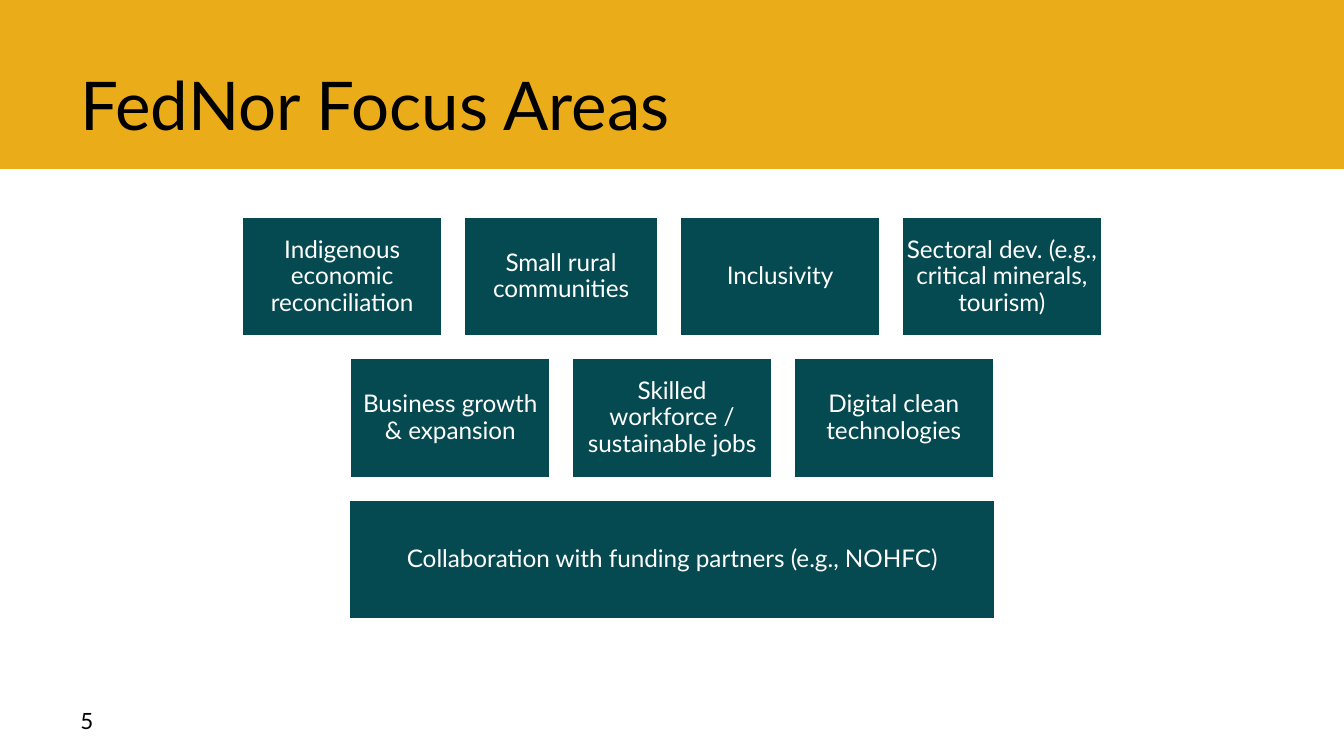
from dataclasses import dataclass

from pptx import Presentation
from pptx.dml.color import RGBColor
from pptx.enum.shapes import MSO_SHAPE
from pptx.enum.text import MSO_ANCHOR, PP_ALIGN
from pptx.util import Pt

RECTANGLE = MSO_SHAPE.RECTANGLE
MIDDLE, BOTTOM = MSO_ANCHOR.MIDDLE, MSO_ANCHOR.BOTTOM
LEFT, CENTER = PP_ALIGN.LEFT, PP_ALIGN.CENTER

SLIDE_WIDTH, SLIDE_HEIGHT = 720, 405
FIRST_ROW_TOP = 116
TILE_HEIGHT = 64.8
GAP = 10.8

# Each row lists its focus areas with their tile widths.
FOCUS_ROWS = [
    [("Indigenous economic reconciliation", 108),
     ("Small rural communities", 105),
     ("Inclusivity", 108),
     ("Sectoral dev. (e.g., critical minerals, tourism)", 108)],
    [("Business growth & expansion", 108),
     ("Skilled workforce / sustainable jobs", 108),
     ("Digital clean technologies", 108)],
    [("Collaboration with funding partners (e.g., NOHFC)", 347)],
]


@dataclass(frozen=True)
class Theme:
    font: str = "Lato"
    banner: RGBColor = RGBColor(0xEB, 0xAC, 0x1A)
    tile: RGBColor = RGBColor(0x05, 0x4A, 0x51)
    light: RGBColor = RGBColor(0xFF, 0xFF, 0xFF)
    dark: RGBColor = RGBColor(0x00, 0x00, 0x00)
    title_size: int = 36
    tile_size: int = 13
    number_size: int = 12


class SlideBuilder:
    def __init__(self, slide, theme):
        self.slide = slide
        self.theme = theme

    def set_text(self, frame, text, size, color, align, anchor):
        frame.word_wrap = True
        frame.vertical_anchor = anchor
        frame.text = text
        paragraph = frame.paragraphs[0]
        paragraph.alignment = align
        for run in paragraph.runs:
            run.font.name = self.theme.font
            run.font.size = Pt(size)
            run.font.color.rgb = color
        return paragraph

    def rectangle(self, left, top, width, height, fill):
        shape = self.slide.shapes.add_shape(
            RECTANGLE, Pt(left), Pt(top), Pt(width), Pt(height))
        shape.shadow.inherit = False
        shape.fill.solid()
        shape.fill.fore_color.rgb = fill
        shape.line.fill.background()
        return shape

    def label(self, text, left, top, width, height, size, anchor):
        box = self.slide.shapes.add_textbox(
            Pt(left), Pt(top), Pt(width), Pt(height))
        self.set_text(box.text_frame, text, size, self.theme.dark, LEFT, anchor)

    def tile(self, text, left, top, width):
        shape = self.rectangle(left, top, width, TILE_HEIGHT, self.theme.tile)
        shape.line.color.rgb = self.theme.light
        shape.line.width = Pt(2)
        frame = shape.text_frame
        frame.margin_left = frame.margin_right = Pt(3)
        frame.margin_top = frame.margin_bottom = Pt(3.6)
        paragraph = self.set_text(frame, text, self.theme.tile_size,
                                  self.theme.light, CENTER, MIDDLE)
        paragraph.line_spacing = 0.9

    def tile_row(self, areas, top):
        """Place one row of tiles, centred on the slide."""
        row_width = sum(width for _, width in areas) + GAP * (len(areas) - 1)
        left = (SLIDE_WIDTH - row_width) / 2
        for text, width in areas:
            self.tile(text, left, top, width)
            left += width + GAP


def main():
    presentation = Presentation()
    presentation.slide_width = Pt(SLIDE_WIDTH)
    presentation.slide_height = Pt(SLIDE_HEIGHT)
    theme = Theme()
    slide = presentation.slides.add_slide(presentation.slide_layouts[6])
    builder = SlideBuilder(slide, theme)

    builder.rectangle(0, 0, SLIDE_WIDTH, 90.5, theme.banner)
    builder.label("FedNor Focus Areas", 36, 22.5, 648, 58,
                  theme.title_size, BOTTOM)
    for index, areas in enumerate(FOCUS_ROWS):
        builder.tile_row(areas, FIRST_ROW_TOP + index * (TILE_HEIGHT + GAP))
    builder.label("5", 36, 375, 77, 21.6, theme.number_size, MIDDLE)

    presentation.save("out.pptx")


if __name__ == "__main__":
    main()
